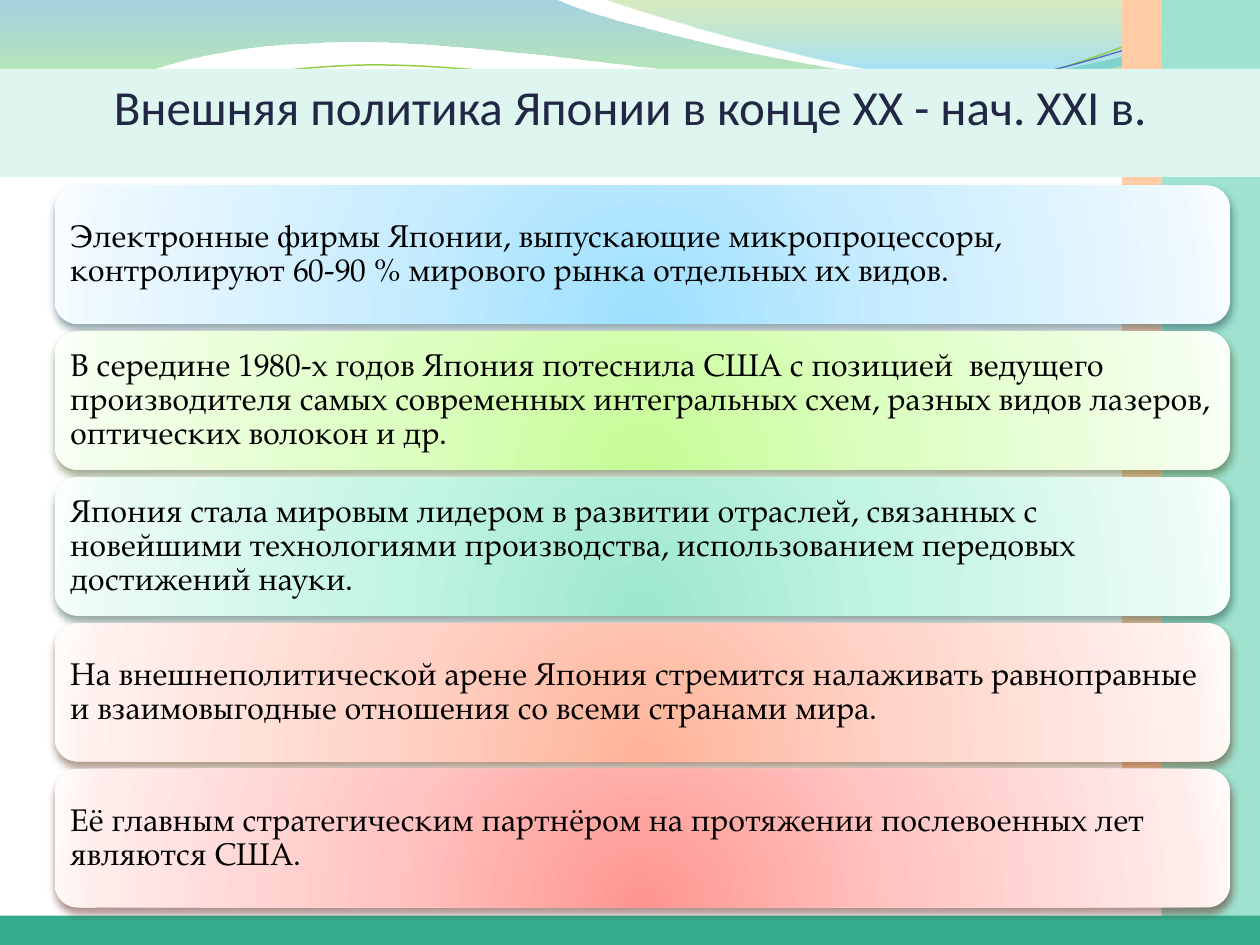
from lxml import etree
from pptx import Presentation, util as u
from pptx.dml.color import RGBColor
from pptx.enum import shapes, text
from pptx.oxml.ns import nsdecls, qn

TITLE = "Внешняя политика Японии в конце ХХ - нач. XXI в."
# text, gradient from centre to rim, shadow
CARDS = [
    ("Электронные фирмы Японии, выпускающие микропроцессоры, контролируют 60-90 % "
     "мирового рынка отдельных их видов.",
     ("9DE0FF", "C8ECFF", "EEF9FF", "F9FDFF"), "204857"),
    ("В середине 1980-х годов Япония потеснила США с позицией  ведущего производителя "
     "самых современных интегральных схем, разных видов лазеров, оптических волокон и др.",
     ("C6FC96", "DDFFC2", "F4FFEC", "FBFFF9"), "3B531B"),
    ("Япония стала мировым лидером в развитии отраслей, связанных с новейшими "
     "технологиями производства, использованием передовых достижений науки.",
     ("9DE7CE", "C3F5E3", "ECFBF6", "F8FFFC"), "20493E"),
    ("На внешнеполитической арене Япония стремится налаживать равноправные и "
     "взаимовыгодные отношения со всеми странами мира.",
     ("FFB398", "FFD3C7", "FFF1EE", "FFFBF9"), "5B2D0A"),
    ("Её главным стратегическим партнёром на протяжении послевоенных лет являются США.",
     ("FF958F", "FFC4C1", "FFEDEC", "FFF9F9"), "56160B"),
]
STOPS = (0, 43, 93, 100)
HEX = {"title": "212745", "text": "000000", "white": "FFFFFF", "peach": "FFCCA6",
       "mint": "9EE2CF", "green": "34AC8B", "pale": "DFF5EF", "lime": "93CE48",
       "blue": "4E67C8"}
# left, top, width, height in cm
BARS = [("white", 0, 8.94, 22.63, 9.53), ("peach", 22.62, 0, 0.8, 17.27),
        ("mint", 23.42, 0, 1.98, 19.05), ("green", 0, 18.46, 25.4, 0.59),
        ("pale", 0, 1.39, 25.4, 2.18)]

# Points in inches: a pair is a straight step, six numbers are a curve
WAVES = [
    ([(0, 0), (4.4, -0.01), (4.76, 0.17, 6.64, 0.63, 7.58, 0.63),
      (8.53, 0.63, 9.58, 0.26, 10, 0.09), (10.01, 0.36),
      (9.83, 0.44, 8.7, 0.76, 7.46, 0.75), (6.22, 0.75, 3.82, 0.28, 2.57, 0.34),
      (1.29, 0.36, 0.46, 0.83, -0.01, 1.13), (0, 0)],
     [(0, "3B9CBF", 45), (100, "9CFA24", 55)]),
    ([(4.79, -0.01), (5.09, 0.11, 6.82, 0.62, 7.69, 0.65),
      (8.56, 0.69, 9.61, 0.32, 10, 0.21), (10, 0), (4.79, -0.01)],
     [(0, "7EBE2C", 30), (80, "39C1F1", 45)]),
]
LINES = [
    ([(0, 1.11), (0.48, 0.93, 1.58, 0.57, 2.77, 0.52),
      (3.95, 0.47, 5.93, 0.89, 7.13, 0.8), (8.33, 0.71, 9.38, 0.15, 9.98, -0.02)],
     "lime", 0.85),
    ([(0, 1.04), (0.47, 0.96, 1.64, 0.61, 2.83, 0.56),
      (4.03, 0.51, 5.97, 0.84, 7.17, 0.75), (8.36, 0.67, 9.41, 0.21, 10, 0.06)],
     "blue", 0.75),
]
INCH = u.Cm(2.54)


def clear(shape):
    shape.shadow.inherit = False
    shape.fill.background()
    shape.line.fill.background()
    return shape


def outline(tree, steps, close):
    """Draw the steps as straight lines, then join each three into a curve."""
    first, *rest = [(s[i] * INCH, s[i + 1] * INCH)
                    for s in steps for i in range(0, len(s), 2)]
    pen = tree.build_freeform(*first)
    pen.add_line_segments(rest, close=close)
    shape = clear(pen.convert_to_shape())
    lines = iter(list(shape._element.iter(qn("a:lnTo"))))
    for step in steps[1:]:
        line = next(lines)
        if len(step) == 6:
            curve = etree.SubElement(line.getparent(), qn("a:cubicBezTo"))
            line.addprevious(curve)
            for part in (line, next(lines), next(lines)):
                curve.append(part[0])
                part.getparent().remove(part)
    return shape


def box(tree, kind, *place):
    return clear(tree.add_shape(kind, *(u.Cm(n) for n in place)))


def shade(shape, stops, course):
    """Swap the empty fill for a gradient; stops are (place, colour, opacity)."""
    marks = "".join(
        f'<a:gs pos="{p * 1000}"><a:srgbClr val="{c}"><a:alpha val="{o * 1000}"/>'
        f'</a:srgbClr></a:gs>' for p, c, o in stops)
    fill = etree.fromstring(f'<a:gradFill {nsdecls("a")} rotWithShape="1">'
                            f'<a:gsLst>{marks}</a:gsLst>{course}</a:gradFill>')
    props = shape._element.spPr
    props.replace(props.find(qn("a:noFill")), fill)


def cast(shape, color):
    effects = shape._element.spPr.find(qn("a:effectLst"))
    effects.append(etree.fromstring(
        f'<a:outerShdw {nsdecls("a")} blurRad="{u.Pt(4.5)}" dist="{u.Pt(3)}" '
        f'dir="5400000" rotWithShape="0"><a:srgbClr val="{color}">'
        f'<a:alpha val="48000"/></a:srgbClr></a:outerShdw>'))


def write(shape, words, font, size, color, align, anchor, pads, space=1.0):
    frame = shape.text_frame
    frame.word_wrap = True
    frame.auto_size = text.MSO_AUTO_SIZE.NONE
    frame.vertical_anchor = anchor
    (frame.margin_left, frame.margin_top,
     frame.margin_right, frame.margin_bottom) = (u.Cm(n) for n in pads)
    par = frame.paragraphs[0]
    par.alignment, par.line_spacing = align, space
    run = par.add_run()
    run.text = words
    run.font.name, run.font.size = font, u.Pt(size)
    run.font.color.rgb = RGBColor.from_string(HEX[color])


def main():
    deck = Presentation()
    deck.slide_width, deck.slide_height = u.Cm(25.4), u.Cm(19.05)
    slide = deck.slides.add_slide(deck.slide_layouts[5])
    tree = slide.shapes
    title = tree.title

    for steps, stops in WAVES:
        shade(outline(tree, steps, True), stops, '<a:lin ang="5400000" scaled="0"/>')
    for steps, color, width in LINES:
        line = outline(tree, steps, False).line
        line.color.rgb = RGBColor.from_string(HEX[color])
        line.width = u.Pt(width)
    for color, *place in BARS:
        bar = box(tree, shapes.MSO_SHAPE.RECTANGLE, *place)
        bar.fill.solid()
        bar.fill.fore_color.rgb = RGBColor.from_string(HEX[color])

    title.left, title.top = u.Cm(0), u.Cm(0.76)
    title.width, title.height = u.Cm(25.4), u.Cm(1.96)
    write(title, TITLE, font="Calibri", size=28, color="title",
          align=text.PP_ALIGN.CENTER, anchor=text.MSO_ANCHOR.BOTTOM, pads=(0, 0.13, 0, 0))
    tree._spTree.append(title._element)  # in front of the pale bar

    top, high, gap = 3.74, 2.79, 0.15
    glow = ('<a:path path="circle"><a:fillToRect l="50000" t="130000" '
            'r="50000" b="-30000"/></a:path>')
    for i, (words, tones, dark) in enumerate(CARDS):
        card = box(tree, shapes.MSO_SHAPE.ROUNDED_RECTANGLE,
                   1.1, top + i * (high + gap), 23.7, high)
        shade(card, [(p, c, 100) for p, c in zip(STOPS, tones)], glow)
        cast(card, dark)
        write(card, words, font="TeX Gyre Pagella", size=18, color="text",
              align=text.PP_ALIGN.LEFT, anchor=text.MSO_ANCHOR.MIDDLE,
              pads=(0.18, 0.18, 0.18, 0.18), space=0.9)

    deck.save("out.pptx")


if __name__ == "__main__":
    main()
